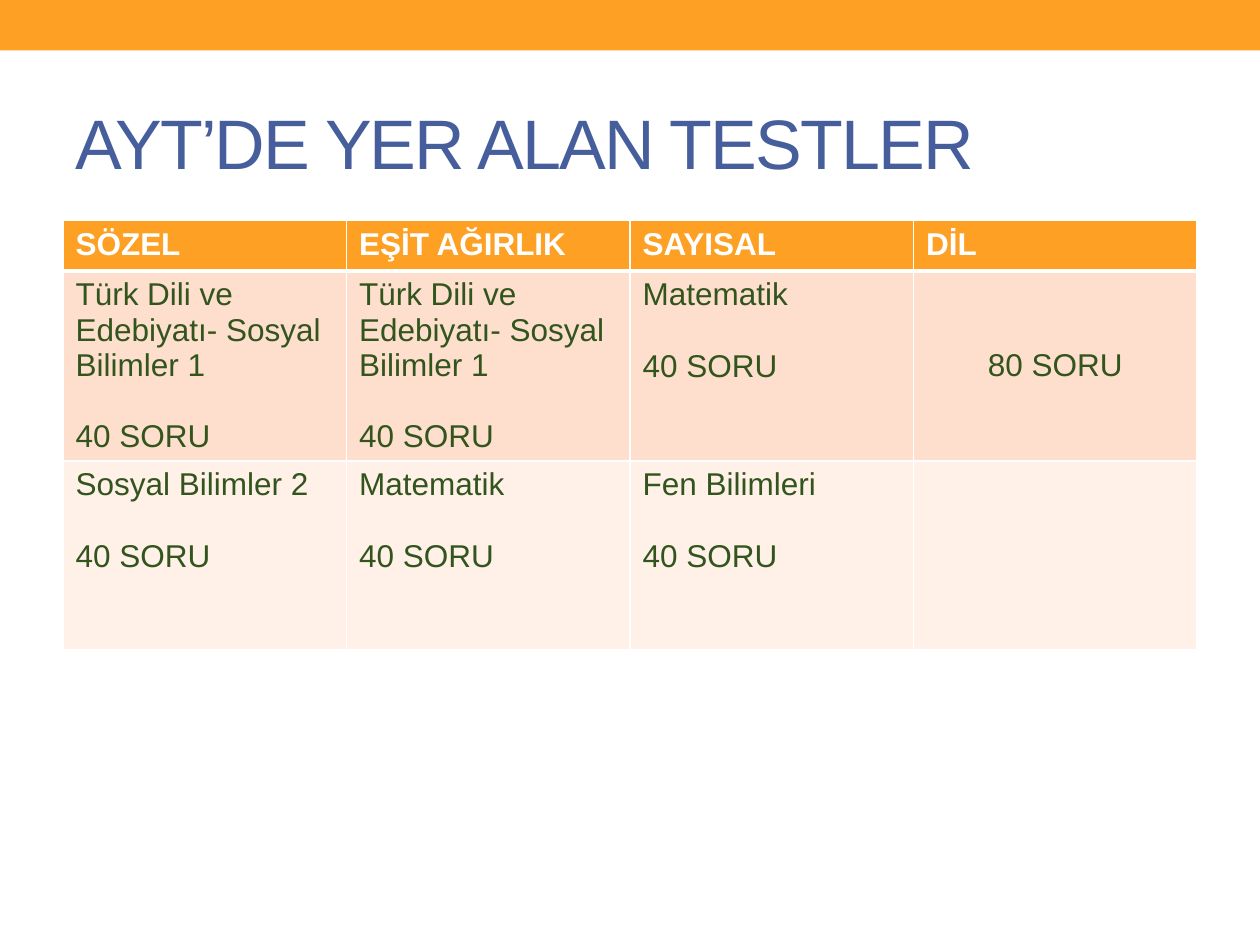
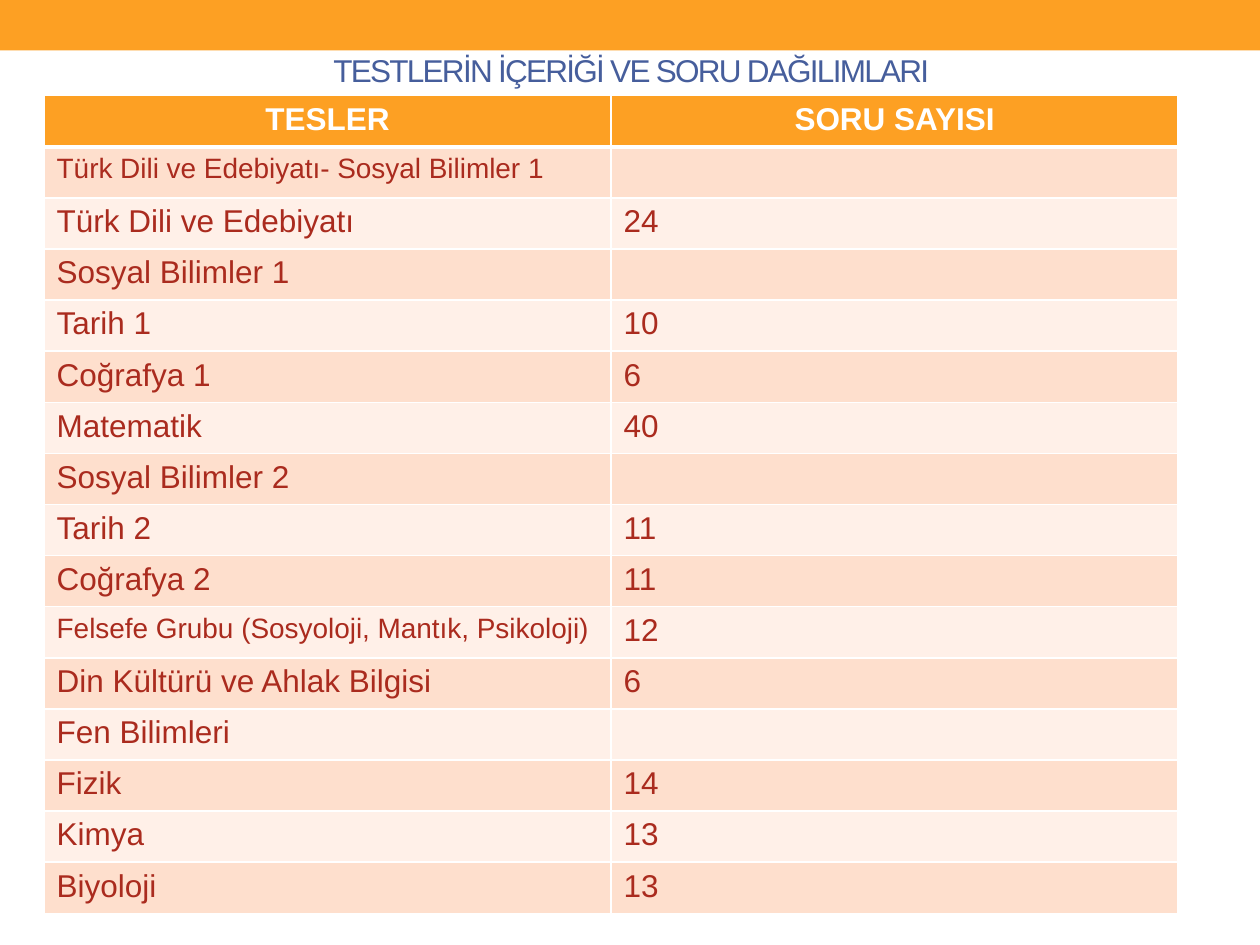
from dataclasses import dataclass

from lxml.etree import SubElement
from pptx import Presentation
from pptx.dml.color import RGBColor
from pptx.enum.shapes import MSO_SHAPE as Shape
from pptx.enum.text import MSO_ANCHOR as Anchor, MSO_AUTO_SIZE as AutoSize, PP_ALIGN as Align
from pptx.oxml.ns import qn
from pptx.util import Inches, Pt


@dataclass(frozen=True)
class Theme:
    font: str = "Arial"
    accent: str = "FDA023"
    title: str = "465E9C"
    white: str = "FFFFFF"
    bands: tuple = ("FEDFCD", "FFF0E8")
    green: str = "32541D"
    red: str = "AA2B1E"
    large: int = 40
    normal: int = 18
    small: int = 16
    tracking: int = -100
    line_gap: float = 20.7
    rule: int = 1
    header_rule: int = 3


class Deck:
    def __init__(self, theme):
        self.theme = theme
        self.presentation = Presentation()
        self.presentation.slide_width = Inches(10)
        self.presentation.slide_height = Inches(7.5)
        self.layout = self.presentation.slide_layouts.get_by_name("Title Only")
        self.slide = None

    def add_slide(self):
        first = self.slide is None
        self.slide = self.presentation.slides.add_slide(self.layout)
        if first:
            self.add_master_band()

    def add_master_band(self):
        band = self.slide.shapes.add_shape(Shape.RECTANGLE, 0, 0, Inches(10), Inches(0.4))
        band.shadow.inherit = False
        band.fill.solid()
        band.fill.fore_color.rgb = RGBColor.from_string(self.theme.accent)
        band.line.fill.background()
        band.element.nvSpPr.cNvPr.set("id", "20")
        self.layout.slide_master.shapes.element.insert(2, band.element)

    def style_paragraph(self, paragraph, size, color, align, bold=False):
        paragraph.alignment = align
        for run in paragraph.runs:
            run.font.name = self.theme.font
            run.font.size = Pt(size)
            run.font.bold = bold
            run.font.color.rgb = RGBColor.from_string(color)

    def add_title(self, text, box, size, align=Align.LEFT):
        title = self.slide.shapes.title
        title.left, title.top, title.width, title.height = map(Inches, box)
        frame = title.text_frame
        frame.text = text
        frame.word_wrap = True
        frame.auto_size = AutoSize.NONE
        frame.vertical_anchor = Anchor.MIDDLE
        heading = frame.paragraphs[0]
        self.style_paragraph(heading, size, self.theme.title, align)
        for run in heading.runs:
            run.font._element.set("spc", str(self.theme.tracking))

    def add_borders(self, cell, row):
        top = self.theme.header_rule if row == 1 else self.theme.rule
        bottom = self.theme.header_rule if row == 0 else self.theme.rule
        properties = cell._tc.get_or_add_tcPr()
        sides = {"L": self.theme.rule, "R": self.theme.rule, "T": top, "B": bottom}
        for side, width in sides.items():
            border = SubElement(properties, qn(f"a:ln{side}"), w=str(Pt(width)))
            fill = SubElement(border, qn("a:solidFill"))
            SubElement(fill, qn("a:srgbClr"), val=self.theme.white)

    def fill_cell(self, cell, row, text, color, size, header_align):
        header = row == 0
        self.add_borders(cell, row)
        cell.fill.solid()
        background = self.theme.accent if header else self.theme.bands[(row - 1) % 2]
        cell.fill.fore_color.rgb = RGBColor.from_string(background)
        cell.text_frame.text = text
        for index, paragraph in enumerate(cell.text_frame.paragraphs):
            self.style_paragraph(
                paragraph,
                self.theme.normal if header else size,
                self.theme.white if header else color,
                header_align if header else Align.LEFT,
                header,
            )
            if index:
                paragraph.space_before = Pt(self.theme.line_gap)

    def add_table(self, rows, left, top, width, heights, color,
                  header_align=Align.LEFT, small_texts=()):
        table = self.slide.shapes.add_table(
            len(rows), len(rows[0]), Inches(left), Inches(top),
            Inches(width), Inches(sum(heights)),
        ).table
        table.horz_banding = False
        for row, (texts, height) in enumerate(zip(rows, heights)):
            table.rows[row].height = Inches(height)
            for column, text in enumerate(texts):
                size = self.theme.small if text in small_texts else self.theme.normal
                self.fill_cell(table.cell(row, column), row, text, color, size, header_align)
        return table

    def save(self):
        self.presentation.save("out.pptx")


LITERATURE = "Türk Dili ve Edebiyatı- Sosyal Bilimler 1"
PHILOSOPHY = "Felsefe Grubu (Sosyoloji, Mantık, Psikoloji)"

TESTS_BY_FIELD = [
    ("SÖZEL", "EŞİT AĞIRLIK", "SAYISAL", "DİL"),
    (f"{LITERATURE}\n40 SORU", f"{LITERATURE}\n40 SORU", "Matematik\n40 SORU", "80 SORU"),
    ("Sosyal Bilimler 2\n40 SORU", "Matematik\n40 SORU", "Fen Bilimleri\n40 SORU", ""),
]

QUESTION_COUNTS = [
    ("TESLER", "SORU SAYISI"),
    (LITERATURE, ""),
    ("Türk Dili ve Edebiyatı", "24"),
    ("Sosyal Bilimler 1", ""),
    ("Tarih 1", "10"),
    ("Coğrafya 1", "6"),
    ("Matematik", "40"),
    ("Sosyal Bilimler 2", ""),
    ("Tarih 2", "11"),
    ("Coğrafya 2", "11"),
    (PHILOSOPHY, "12"),
    ("Din Kültürü ve Ahlak Bilgisi", "6"),
    ("Fen Bilimleri", ""),
    ("Fizik", "14"),
    ("Kimya", "13"),
    ("Biyoloji", "13"),
]


def add_fields_slide(deck):
    deck.add_slide()
    deck.add_title("AYT’DE YER ALAN TESTLER", (0.5, 0.58, 9, 1.08), deck.theme.large)
    fields = deck.add_table(TESTS_BY_FIELD, 0.5, 1.75, 9, (0.4, 1.5, 1.5), deck.theme.green)
    language = fields.cell(1, 3)
    language.vertical_anchor = Anchor.MIDDLE
    language.text_frame.paragraphs[0].alignment = Align.CENTER


def add_counts_slide(deck):
    deck.add_slide()
    deck.add_title("TESTLERİN İÇERİĞİ VE SORU DAĞILIMLARI", (0.51, 0.36, 9, 0.39),
                   deck.theme.normal, Align.CENTER)
    row_count = len(QUESTION_COUNTS)
    deck.add_table(QUESTION_COUNTS, 0.35, 0.76, 9, [6.49 / row_count] * row_count,
                   deck.theme.red, Align.CENTER, (LITERATURE, PHILOSOPHY))


def main():
    deck = Deck(Theme())
    add_fields_slide(deck)
    add_counts_slide(deck)
    deck.save()


if __name__ == "__main__":
    main()
